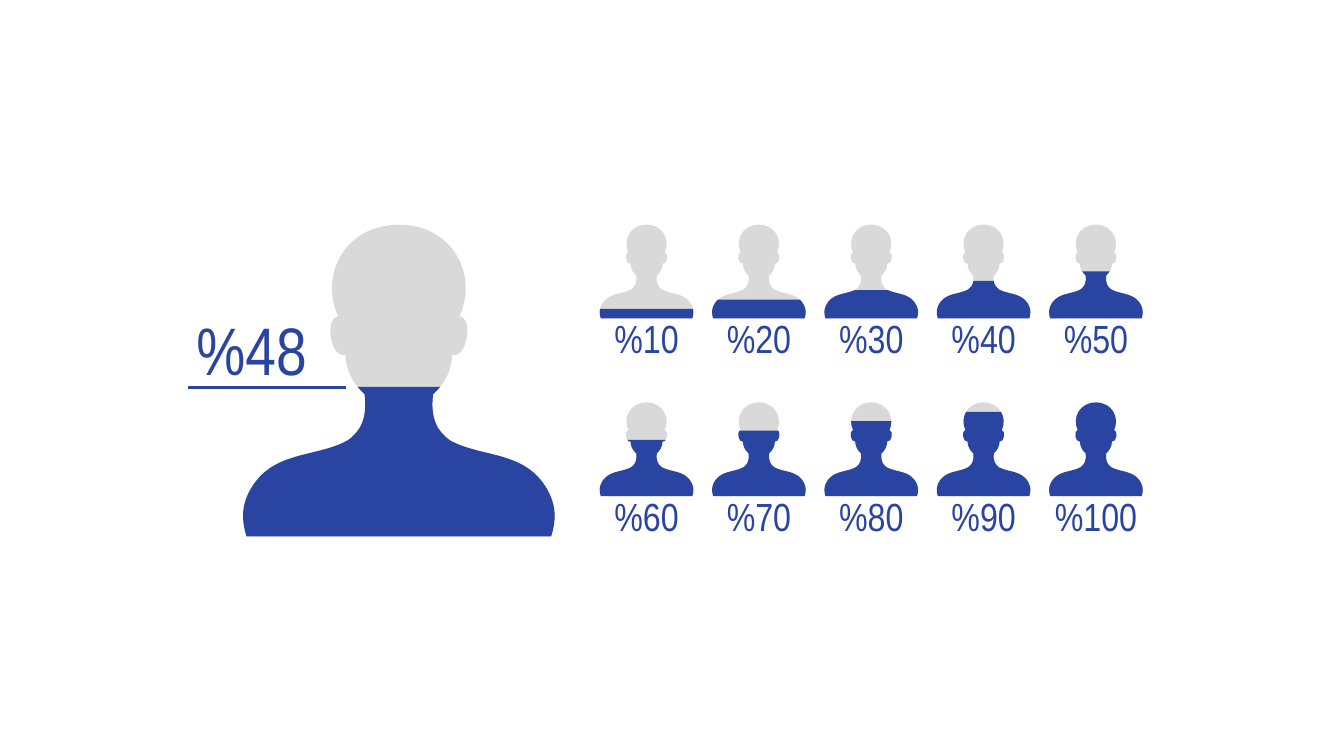
from dataclasses import dataclass
from typing import NamedTuple

from lxml.etree import SubElement
from pptx import Presentation
from pptx.dml.color import RGBColor
from pptx.enum.shapes import MSO_CONNECTOR
from pptx.enum.text import MSO_ANCHOR, MSO_AUTO_SIZE, PP_ALIGN
from pptx.oxml.ns import qn
from pptx.slide import Slide
from pptx.util import Pt

BLUE = RGBColor(0x29, 0x44, 0xA1)
GRAY = RGBColor(0xD9, 0xD9, 0xD9)
FONT = "Arial Narrow"
BUST_HEIGHT = 309


class Point(NamedTuple):
    x: float
    y: float


class Curve(NamedTuple):
    start: Point
    first: Point
    second: Point
    end: Point


# Right half of the bust: x from the centre line, y from the top
HALF_BUST = [
    Curve(Point(0, 0), Point(54, 0), Point(79, 51), Point(60, 91)),                # skull
    Curve(Point(60, 91), Point(74, 92), Point(68, 133), Point(53, 129)),           # ear
    Curve(Point(53, 129), Point(52, 146), Point(45, 158), Point(34, 168)),         # jaw
    Curve(Point(34, 168), Point(31, 192), Point(38, 205), Point(51, 214)),         # neck
    Curve(Point(51, 214), Point(84, 232), Point(129, 223), Point(150, 268)),       # shoulder
    Curve(Point(150, 268), Point(153, 275), Point(154.5, 282), Point(154.5, 288)),  # upper arm
    Curve(Point(154.5, 288), Point(154.5, 296), Point(153, 303), Point(151, 309)),  # lower arm
]


@dataclass
class Person:
    percent: int
    left: float
    top: float
    size: float


@dataclass
class Label:
    text: str
    left: float
    top: float
    width: float
    height: float
    font_size: float
    side_inset: float = 7.2


def between(a: Point, b: Point, t: float) -> Point:
    return Point(a.x + (b.x - a.x) * t, a.y + (b.y - a.y) * t)


def rest_of(curve: Curve, t: float) -> Curve:
    """The part of the curve after t."""
    a, b, c = (between(p, q, t) for p, q in zip(curve, curve[1:]))
    d, e = between(a, b, t), between(b, c, t)
    return Curve(between(d, e, t), e, c, curve.end)


def below(curves: list[Curve], level: float) -> list[Curve]:
    """Keep the part of the half bust under a horizontal level."""
    kept = [curve for curve in curves if curve.end.y > level]
    if kept[0].start.y < level:
        low, high = 0.0, 1.0
        for _ in range(30):
            middle = (low + high) / 2
            if rest_of(kept[0], middle).start.y < level:
                low = middle
            else:
                high = middle
        kept[0] = rest_of(kept[0], high)
    return kept


def draw_bust(page: Slide, half: list[Curve], person: Person, color: RGBColor) -> None:
    scale = person.size / BUST_HEIGHT
    center = person.left + person.size / 2

    def place(point: Point) -> tuple[int, int]:
        return Pt(center + point.x * scale), Pt(person.top + point.y * scale)

    mirrored = [Curve(*(Point(-p.x, p.y) for p in reversed(curve))) for curve in reversed(half)]
    base = Curve(half[-1].end, half[-1].end, mirrored[0].start, mirrored[0].start)
    curves = half + [base] + mirrored

    builder = page.shapes.build_freeform(*place(half[0].start), scale=1.0)
    builder.add_line_segments([place(curve.end) for curve in curves], close=True)
    shape = builder.convert_to_shape()
    shape.shadow.inherit = False
    shape.fill.solid()
    shape.fill.fore_color.rgb = color
    shape.line.fill.background()

    # Bend the straight segments into curves
    segments = list(shape._element.iter(qn("a:lnTo")))
    for segment, curve in zip(segments, curves):
        if curve is base:
            continue
        segment.tag = qn("a:cubicBezTo")
        for position, control in enumerate((curve.first, curve.second)):
            x, y = place(control)
            mark = SubElement(segment, qn("a:pt"), x=str(x - shape.left), y=str(y - shape.top))
            segment.insert(position, mark)


def draw_person(page: Slide, person: Person) -> None:
    level = BUST_HEIGHT * (100 - person.percent) / 100
    draw_bust(page, HALF_BUST, person, GRAY)
    draw_bust(page, below(HALF_BUST, level), person, BLUE)


def draw_label(page: Slide, label: Label) -> None:
    box = page.shapes.add_textbox(Pt(label.left), Pt(label.top),
                                  Pt(label.width), Pt(label.height))
    frame = box.text_frame
    frame.word_wrap = True
    frame.auto_size = MSO_AUTO_SIZE.SHAPE_TO_FIT_TEXT
    frame.vertical_anchor = MSO_ANCHOR.BOTTOM
    frame.margin_left = frame.margin_right = Pt(label.side_inset)
    frame.text = label.text
    para = frame.paragraphs[0]
    para.alignment = PP_ALIGN.CENTER
    span = para.runs[0]
    span.font.name = FONT
    span.font.size = Pt(label.font_size)
    span.font.color.rgb = BLUE


def draw_level_line(page: Slide, left: float, right: float, y: float) -> None:
    line = page.shapes.add_connector(MSO_CONNECTOR.STRAIGHT, Pt(left), Pt(y), Pt(right), Pt(y))
    line.line.color.rgb = BLUE
    line.line.width = Pt(2.25)
    SubElement(line._element.spPr, qn("a:effectLst"))


def main() -> None:
    deck = Presentation()
    deck.slide_width, deck.slide_height = Pt(960), Pt(540)
    page = deck.slides.add_slide(deck.slide_layouts[6])

    # Large figure with its level line
    draw_person(page, Person(48, 173.6, 160.5, 222.6))
    draw_label(page, Label("%48", 128.2, 216, 103, 65.4, 48))
    draw_level_line(page, 134, 247.5, 276.5)

    # Scale of small figures, five to a row
    columns, size = 5, 66.9
    for index in range(10):
        row, column = divmod(index, columns)
        percent = 10 * (index + 1)
        person = Person(percent, 428.4 + 80.25 * column, 160.5 + 127 * row, size)
        draw_person(page, person)
        inset = 0 if percent == 100 else 7.2
        draw_label(page, Label(f"%{percent}", person.left, person.top + 60.3,
                               size, 41.2, 28, inset))

    deck.save("out.pptx")


if __name__ == "__main__":
    main()
